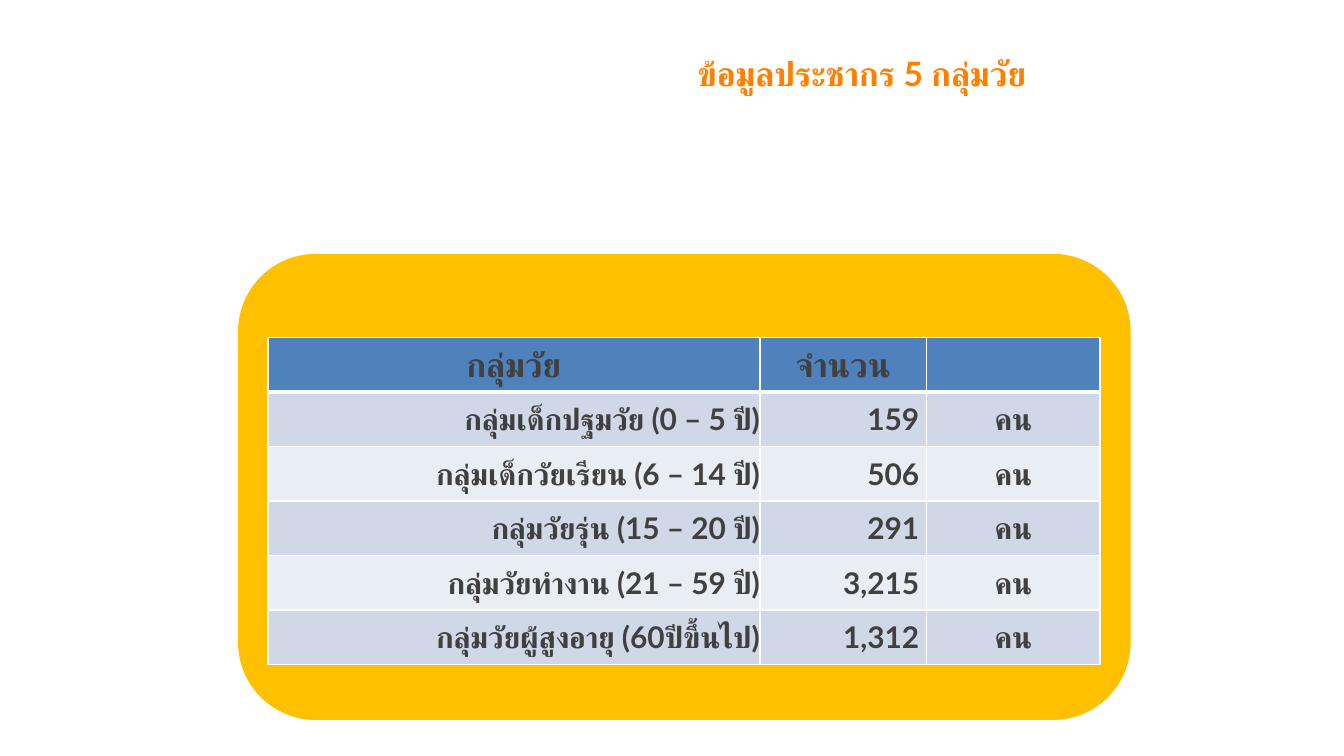
from lxml import etree
from pptx import Presentation
from pptx.dml.color import RGBColor
from pptx.enum import shapes, text
from pptx.oxml import ns
from pptx.util import Cm, Pt

TITLE = "ข้อมูลประชากร 5 กลุ่มวัย"
HEADERS = ("กลุ่มวัย", "จำนวน", "")
AGE_GROUPS = [
    ("กลุ่มเด็กปฐมวัย (0 – 5 ปี)", "159", "คน"),
    ("กลุ่มเด็กวัยเรียน (6 – 14 ปี)", "506", "คน"),
    ("กลุ่มวัยรุ่น (15 – 20 ปี)", "291", "คน"),
    ("กลุ่มวัยทำงาน (21 – 59 ปี)", "3,215", "คน"),
    ("กลุ่มวัยผู้สูงอายุ (60ปีขึ้นไป)", "1,312", "คน"),
]

FONT = "Lato"
ORANGE = RGBColor(0xFF, 0x80, 0x01)
AMBER = RGBColor(0xFF, 0xC0, 0x00)
BLUE = RGBColor(0x4F, 0x81, 0xBD)
BANDS = (RGBColor(0xD0, 0xD8, 0xE8), RGBColor(0xE9, 0xED, 0xF4))
DARK_GREY = RGBColor(0x40, 0x40, 0x40)
WHITE = RGBColor(0xFF, 0xFF, 0xFF)

COLUMN_WIDTHS = (Cm(9.3), Cm(3.15), Cm(3.28))
ROW_HEIGHT = Cm(1.03)
NUMBER_MARGIN = Cm(0.14)
LEFT, CENTER, RIGHT = (text.PP_ALIGN.LEFT, text.PP_ALIGN.CENTER,
                       text.PP_ALIGN.RIGHT)
BODY_ALIGNMENTS = (RIGHT, RIGHT, CENTER)


def write(frame, content, size, color, alignment):
    paragraph = frame.paragraphs[0]
    paragraph.alignment = alignment
    run = paragraph.add_run()
    run.text = content
    font = run.font
    font.name, font.size, font.bold = FONT, Pt(size), True
    font.color.rgb = color
    # Thai letters take the complex-script typeface
    complex_font = etree.SubElement(run._r.get_or_add_rPr(), ns.qn("a:cs"))
    complex_font.set("typeface", FONT)


def add_borders(cell, top, bottom):
    """Draw white cell borders; top and bottom are widths in points."""
    properties = cell._tc.get_or_add_tcPr()
    for side, width in (("L", 1), ("R", 1), ("T", top), ("B", bottom)):
        line = etree.SubElement(properties, ns.qn(f"a:ln{side}"),
                                w=str(Pt(width)))
        fill = etree.SubElement(line, ns.qn("a:solidFill"))
        etree.SubElement(fill, ns.qn("a:srgbClr"), val=str(WHITE))


def paint(cell, color):
    cell.fill.solid()
    cell.fill.fore_color.rgb = color


def add_panel(slide):
    panel = slide.shapes.add_shape(
        shapes.MSO_SHAPE.ROUNDED_RECTANGLE,
        Cm(4.5), Cm(4.8), Cm(16.87), Cm(8.81))
    panel.shadow.inherit = False
    panel.fill.solid()
    panel.fill.fore_color.rgb = AMBER
    panel.line.fill.background()


def add_title(slide):
    box = slide.shapes.add_textbox(Cm(12.93), Cm(0.69), Cm(8.61), Cm(1.37))
    frame = box.text_frame
    frame.word_wrap = True
    frame.vertical_anchor = text.MSO_ANCHOR.MIDDLE
    write(frame, TITLE, 18, ORANGE, LEFT)


def add_population_table(slide):
    row_count = len(AGE_GROUPS) + 1
    table = slide.shapes.add_table(
        row_count, len(HEADERS), Cm(5.06), Cm(6.38),
        sum(COLUMN_WIDTHS), ROW_HEIGHT * row_count).table
    for column, width in zip(table.columns, COLUMN_WIDTHS):
        column.width = width
    for row in table.rows:
        row.height = ROW_HEIGHT

    for column, header in enumerate(HEADERS):
        cell = table.cell(0, column)
        add_borders(cell, top=1, bottom=3)
        paint(cell, BLUE)
        if header:
            write(cell.text_frame, header, 18, DARK_GREY, CENTER)

    for row, group in enumerate(AGE_GROUPS, start=1):
        for column, content in enumerate(group):
            cell = table.cell(row, column)
            add_borders(cell, top=3 if row == 1 else 1, bottom=1)
            paint(cell, BANDS[(row - 1) % 2])
            cell.margin_left = cell.margin_top = cell.margin_bottom = 0
            cell.margin_right = NUMBER_MARGIN if column == 1 else 0
            cell.vertical_anchor = text.MSO_ANCHOR.MIDDLE
            write(cell.text_frame, content, 16, DARK_GREY,
                  BODY_ALIGNMENTS[column])


def main():
    presentation = Presentation()
    presentation.slide_width, presentation.slide_height = Cm(25.4), Cm(14.29)
    slide = presentation.slides.add_slide(presentation.slide_layouts[6])
    add_panel(slide)
    add_title(slide)
    add_population_table(slide)
    presentation.save("out.pptx")


if __name__ == "__main__":
    main()
